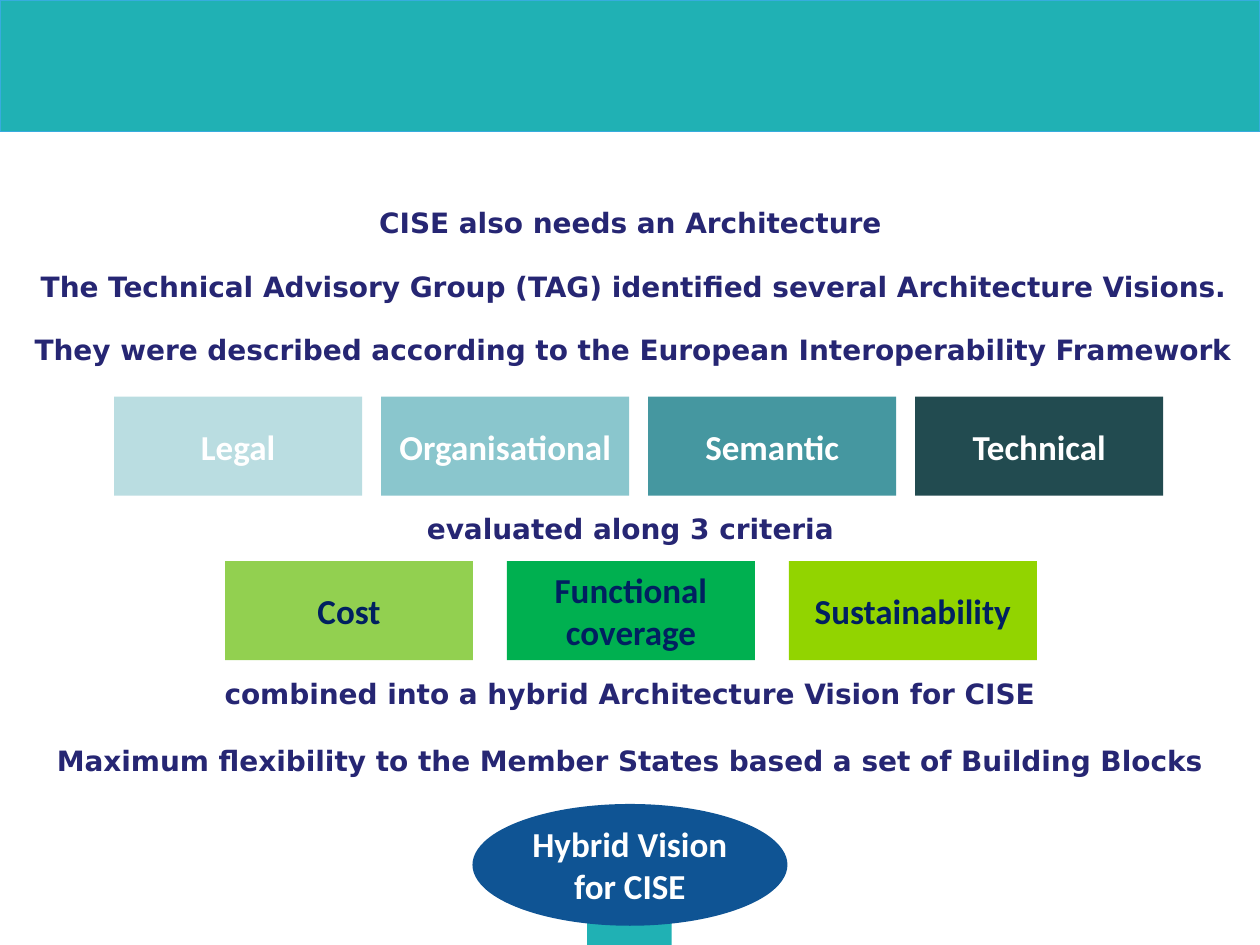
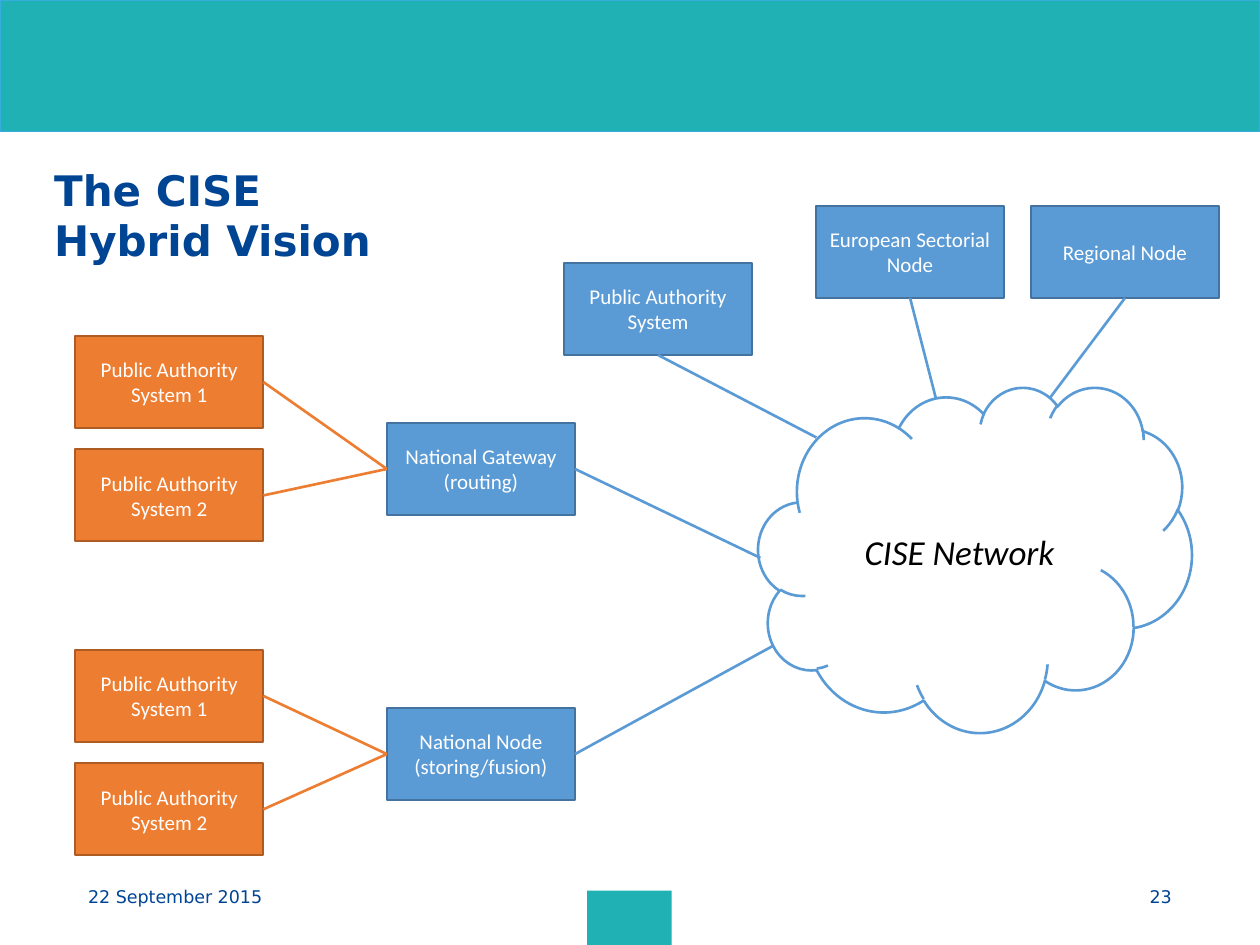
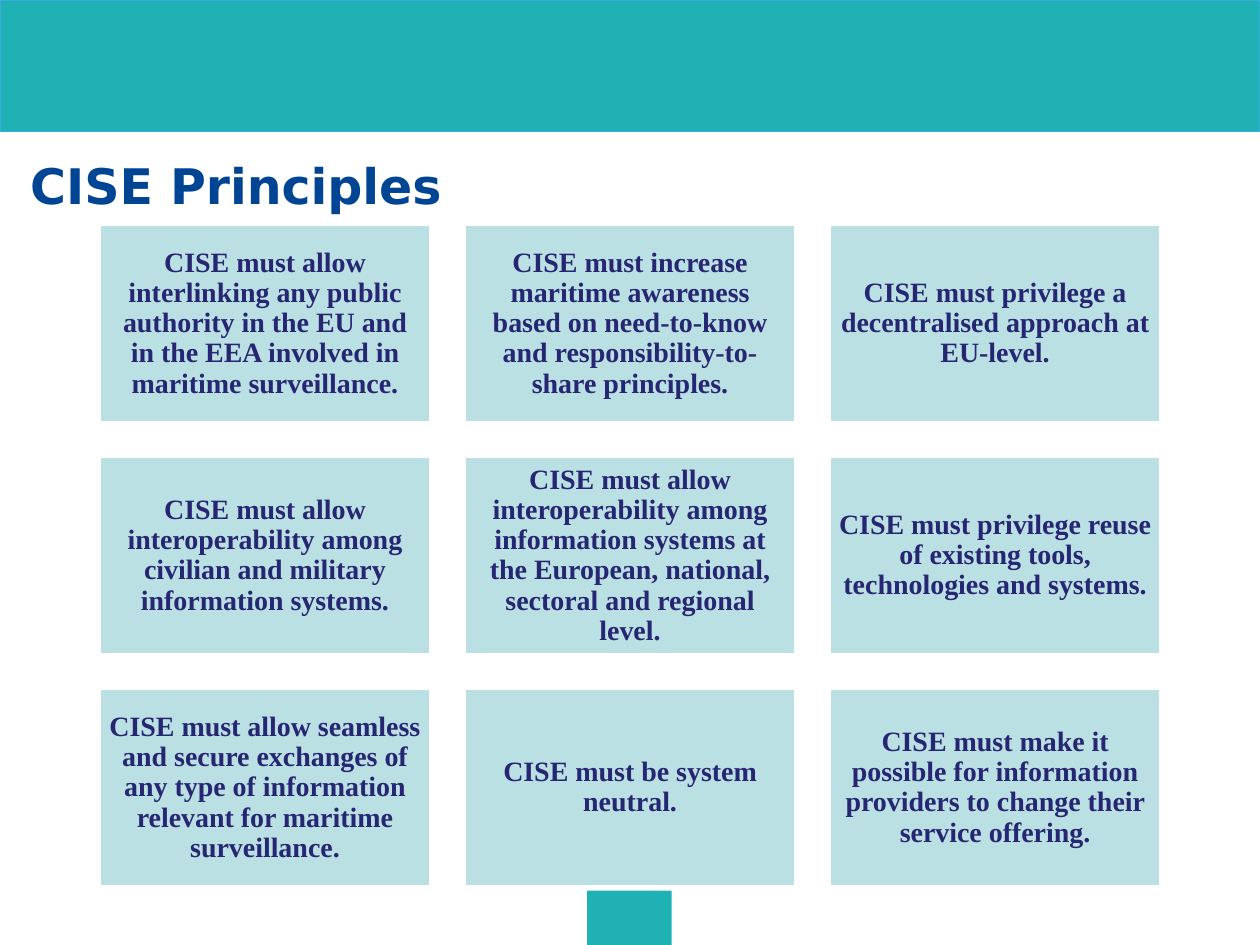
"""Build three slides on the CISE architecture vision."""
from dataclasses import dataclass, field
from itertools import product

from lxml import etree
from pptx import Presentation
from pptx.dml.color import RGBColor
from pptx.enum.shapes import MSO_CONNECTOR, MSO_SHAPE
from pptx.enum.text import MSO_ANCHOR, MSO_AUTO_SIZE, PP_ALIGN
from pptx.oxml.ns import qn
from pptx.shapes.autoshape import Shape
from pptx.shapes.connector import Connector
from pptx.slide import Slide
from pptx.util import Pt

RECT, OVAL, CLOUD = MSO_SHAPE.RECTANGLE, MSO_SHAPE.OVAL, MSO_SHAPE.CLOUD
LEFT, MID, RIGHT = PP_ALIGN.LEFT, PP_ALIGN.CENTER, PP_ALIGN.RIGHT
TOP, CENTRE = MSO_ANCHOR.TOP, MSO_ANCHOR.MIDDLE
GROW = MSO_AUTO_SIZE.SHAPE_TO_FIT_TEXT
STRAIGHT = MSO_CONNECTOR.STRAIGHT
SITE_LEFT, SITE_BASE, SITE_RIGHT = 1, 2, 3

WHITE = RGBColor(0xFF, 0xFF, 0xFF)
BLACK = RGBColor(0x00, 0x00, 0x00)
TEAL = RGBColor(0x20, 0xB1, 0xB4)
SKY = RGBColor(0x37, 0xAC, 0xDE)
NAVY = RGBColor(0x00, 0x44, 0x94)
INDIGO = RGBColor(0x26, 0x26, 0x73)
DARK = RGBColor(0x00, 0x20, 0x60)
ROYAL = RGBColor(0x0F, 0x54, 0x94)
BLUE = RGBColor(0x5B, 0x9B, 0xD5)
STEEL = RGBColor(0x43, 0x73, 0x9E)
ORANGE = RGBColor(0xED, 0x7D, 0x31)
RUST = RGBColor(0xAF, 0x5C, 0x24)
PALE = RGBColor(0xBB, 0xE0, 0xE3)
MIST = RGBColor(0xBA, 0xDD, 0xE1)
AQUA = RGBColor(0x8A, 0xC6, 0xCD)
LAKE = RGBColor(0x45, 0x97, 0xA0)
PINE = RGBColor(0x22, 0x4B, 0x50)
LIME = RGBColor(0x92, 0xD0, 0x50)
GREEN = RGBColor(0x00, 0xB0, 0x50)
ACID = RGBColor(0x92, 0xD4, 0x00)

SANS, HEAD, SERIF = "Calibri", "DejaVu Sans", "Times New Roman"
NONE = (0, 0, 0, 0)


@dataclass(frozen=True)
class Look:
    """How a text is set."""
    ink: RGBColor
    font: dict
    align: PP_ALIGN = MID
    anchor: MSO_ANCHOR = CENTRE
    pads: tuple = (7.2, 3.6, 7.2, 3.6)
    para: dict = field(default_factory=dict)


@dataclass(frozen=True)
class Box:
    """A place on a slide, in points."""
    left: float
    top: float
    wide: float
    high: float

    def args(self) -> list:
        """Return the four lengths."""
        return [Pt(n) for n in (self.left, self.top, self.wide, self.high)]


@dataclass(frozen=True)
class Paint:
    """Fill and outline of a shape."""
    fill: RGBColor
    line: RGBColor | None = None
    width: float = 1


@dataclass(frozen=True)
class Tier:
    """A row of equal tiles."""
    left: float
    top: float
    pitch: float
    look: Look
    tiles: tuple


@dataclass(frozen=True)
class Node:
    """A blue node joined to the cloud."""
    text: str
    left: float
    top: float
    site: int
    goal: tuple
    pair: float | None = None


TILE = {"size": Pt(20), "name": SANS, "bold": True}
BODY = {"size": Pt(16), "name": HEAD, "bold": True}
NOTE = {"size": Pt(10), "name": HEAD}
LIGHT, DEEP = Look(WHITE, TILE), Look(DARK, TILE)
SPEECH = Look(INDIGO, BODY, anchor=TOP, para={"space_after": Pt(19)})
LABEL = Look(WHITE, {"size": Pt(12), "name": SANS})
NET = Look(BLACK, {"size": Pt(20), "name": SANS, "italic": True})
CARD = Look(INDIGO, {"size": Pt(16), "name": SERIF, "bold": True},
            pads=(5, 5, 5, 5), para={"line_spacing": 0.9})
DATE = Look(NAVY, NOTE, LEFT, TOP, NONE)
PAGE = Look(NAVY, NOTE, RIGHT, TOP, NONE)
VISION = Look(NAVY, {"size": Pt(24), "name": HEAD, "bold": True}, LEFT,
              pads=(14.4, 0, 0, 0))
TITLE = Look(NAVY, {"size": Pt(28), "name": HEAD, "bold": True}, LEFT, TOP, NONE)

SPOKEN = (
    (Box(10, 113.8, 700.6, 26.6), "CISE also needs an Architecture"),
    (Box(10, 150.5, 704.2, 26.6),
     "The Technical Advisory Group (TAG) identified several Architecture Visions."),
    (Box(11.5, 186.5, 700.6, 26.6),
     "They were described according to the European Interoperability Framework"),
    (Box(59, 288.7, 602.6, 26.6), "evaluated along 3 criteria"),
    (Box(0, 383, 720, 65.5),
     "combined into a hybrid Architecture Vision for CISE\n"
     "Maximum flexibility to the Member States based a set of Building Blocks"),
)
TIERS = (
    Tier(65.2, 226.6, 152.6, LIGHT, (
        ("Legal", MIST), ("Organisational", AQUA),
        ("Semantic", LAKE), ("Technical", PINE))),
    Tier(128.6, 320.6, 161.1, DEEP, (
        ("Cost", LIME), ("Functional coverage", GREEN), ("Sustainability", ACID))),
)
NODES = (
    Node("National Node\v(storing/fusion)", 221.1, 404.6, SITE_RIGHT,
         (441.5, 369.2), 371.4),
    Node("National Gateway\v(routing)", 221.1, 241.7, SITE_RIGHT,
         (434.5, 318.8), 192),
    Node("Public Authority System", 322.3, 150.3, SITE_BASE, (466.5, 250)),
    Node("European Sectorial Node", 466.3, 117.7, SITE_BASE, (534.8, 227.6)),
    Node("Regional Node", 589.1, 117.7, SITE_BASE, (599.8, 227.6)),
)
RULES = (
    "CISE must allow interlinking any public authority in the EU and in the EEA "
    "involved in maritime surveillance.",
    "CISE must increase maritime awareness based on need-to-know and "
    "responsibility-to-share principles.",
    "CISE must privilege a decentralised approach at EU-level.",
    "CISE must allow interoperability among civilian and military information "
    "systems.",
    "CISE must allow interoperability among information systems at the European, "
    "national, sectoral and regional level.",
    "CISE must privilege reuse of existing tools, technologies and systems.",
    "CISE must allow seamless and secure exchanges of any type of information "
    "relevant for maritime surveillance.",
    "CISE must be system neutral.",
    "CISE must make it possible for information providers to change their service "
    "offering.",
)


def apply(thing: object, form: dict) -> None:
    """Set each format value on an object."""
    for key, value in form.items():
        setattr(thing, key, value)


def write(shape: Shape, text: str, look: Look) -> None:
    """Put styled text in a shape."""
    frame = shape.text_frame
    sides = ("margin_left", "margin_top", "margin_right", "margin_bottom")
    apply(frame, dict(zip(sides, map(Pt, look.pads))))
    apply(frame, {"word_wrap": True, "vertical_anchor": look.anchor, "text": text})
    for para in frame.paragraphs:
        apply(para, {"alignment": look.align, **look.para})
        for run in para.runs:
            apply(run.font, look.font)
            run.font.color.rgb = look.ink


def say(slide: Slide, box: Box, text: str, look: Look) -> None:
    """Add a text box."""
    shape = slide.shapes.add_textbox(*box.args())
    write(shape, text, look)
    shape.text_frame.auto_size = GROW


def draw(slide: Slide, box: Box, paint: Paint, text: str = "",
         look: Look = LIGHT, kind: MSO_SHAPE = RECT) -> Shape:
    """Add a painted shape."""
    shape = slide.shapes.add_shape(kind, *box.args())
    shape.shadow.inherit = False
    shape.fill.solid()
    shape.fill.fore_color.rgb = paint.fill
    if paint.line is None:
        shape.line.fill.background()
    else:
        shape.line.color.rgb = paint.line
        shape.line.width = Pt(paint.width)
    if text:
        write(shape, text, look)
    return shape


def link(slide: Slide, start: Shape, site: int, tint: RGBColor,
         goal: tuple = (0, 0)) -> Connector:
    """Add a line from the side of a shape to a point."""
    x, y = map(Pt, goal)
    line = slide.shapes.add_connector(STRAIGHT, x, y, x, y)
    line.begin_connect(start, site)
    line.line.color.rgb = tint
    line.line.width = Pt(1.5)
    etree.SubElement(line._element.spPr, qn("a:effectLst"))
    return line


def start(deck: Presentation) -> Slide:
    """Add a blank slide with the band and the tab."""
    slide = deck.slides.add_slide(deck.slide_layouts[6])
    draw(slide, Box(0, 0, 720, 75.4), Paint(TEAL, SKY, 0.75))
    draw(slide, Box(335.5, 509, 48.3, 31), Paint(TEAL))
    return slide


def needs(deck: Presentation) -> None:
    """Build the slide on the need for an architecture."""
    slide = start(deck)
    for box, text in SPOKEN:
        say(slide, box, text, SPEECH)
    for tier in TIERS:
        for i, (text, fill) in enumerate(tier.tiles):
            box = Box(tier.left + i * tier.pitch, tier.top, 141.7, 56.6)
            draw(slide, box, Paint(fill), text, tier.look)
    draw(slide, Box(270, 459.4, 180, 69.6), Paint(ROYAL),
         "Hybrid Vision for CISE", LIGHT, OVAL)


def hybrid(deck: Presentation) -> None:
    """Build the slide on the hybrid vision."""
    slide = start(deck)
    say(slide, Box(501.8, 506.2, 167.8, 12.2), "23", PAGE)
    say(slide, Box(50.4, 506.2, 167.8, 12.2), "22 September 2015", DATE)
    say(slide, Box(16.6, 93.6, 311.8, 58.3), "The CISE\vHybrid Vision", VISION)
    draw(slide, Box(433.4, 221, 247.7, 197.3), Paint(WHITE, BLUE, 1.5),
         "CISE Network", NET, CLOUD)
    for node in NODES:
        hub = draw(slide, Box(node.left, node.top, 107.5, 52.6),
                   Paint(BLUE, STEEL), node.text, LABEL)
        link(slide, hub, node.site, BLUE, node.goal)
        if node.pair is None:
            continue
        for i in range(2):
            box = Box(43, node.pair + i * 64.8, 107.5, 52.6)
            peer = draw(slide, box, Paint(ORANGE, RUST),
                        f"Public Authority System {i + 1}", LABEL)
            link(slide, peer, SITE_RIGHT, ORANGE).end_connect(hub, SITE_LEFT)


def tenets(deck: Presentation) -> None:
    """Build the slide on the principles."""
    slide = start(deck)
    say(slide, Box(17.3, 88.6, 620, 33.8), "CISE Principles", TITLE)
    for (row, col), text in zip(product(range(3), repeat=2), RULES):
        box = Box(56.7 + col * 208.6, 128.1 + row * 132.6, 189.5, 113.7)
        draw(slide, box, Paint(PALE, WHITE, 2), text, CARD)


def main() -> None:
    """Build and save the deck."""
    deck = Presentation()
    apply(deck, {"slide_width": Pt(720), "slide_height": Pt(540)})
    for build in (needs, hybrid, tenets):
        build(deck)
    deck.save("out.pptx")


if __name__ == "__main__":
    main()
